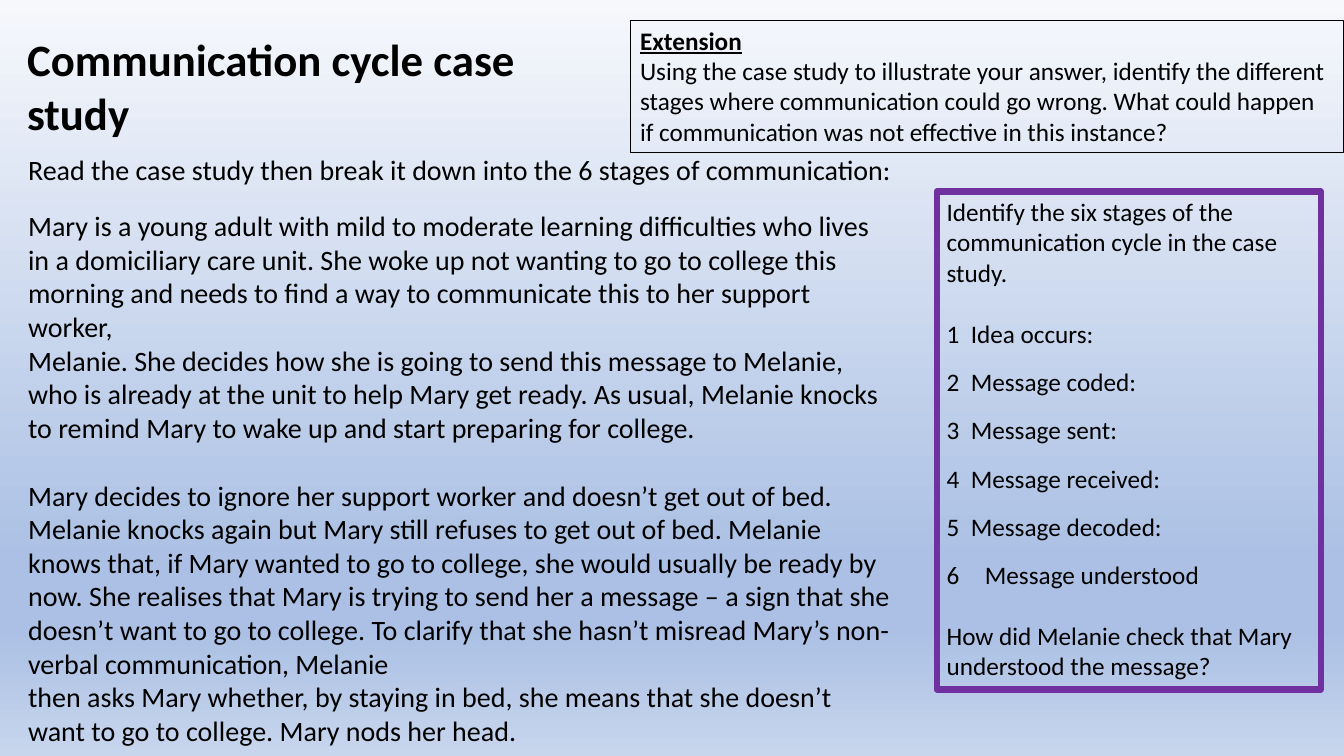
from copy import deepcopy

from lxml.etree import SubElement
from pptx import Presentation
from pptx.dml.color import RGBColor
from pptx.enum.shapes import MSO_SHAPE as Shape
from pptx.enum.text import MSO_ANCHOR as Anchor, PP_ALIGN as Align
from pptx.oxml.ns import qn
from pptx.util import Inches, Pt

WIDTH, HEIGHT = Inches(13.33), Inches(7.5)
BLACK = RGBColor(0x00, 0x00, 0x00)
PURPLE = RGBColor(0x70, 0x30, 0xA0)
PALE = RGBColor(0xF6, 0xF8, 0xFC)
BLUE = RGBColor(0xAB, 0xC0, 0xE4)
LIGHT_BLUE = RGBColor(0xC7, 0xD5, 0xED)
SKY = [(0, PALE), (0.74, BLUE), (0.83, BLUE), (1, LIGHT_BLUE)]

CASE_STUDY = [
    ("Mary is a young adult with mild to moderate learning difficulties who lives in a "
     "domiciliary care unit. She woke up not wanting to go to college this morning and "
     "needs to find a way to communicate this to her support worker,", 0),
    ("Melanie. She decides how she is going to send this message to Melanie, who is "
     "already at the unit to help Mary get ready. As usual, Melanie knocks to remind "
     "Mary to wake up and start preparing for college.", 0),
    ("Mary decides to ignore her support worker and doesn’t get out of bed. Melanie "
     "knocks again but Mary still refuses to get out of bed. Melanie knows that, if Mary "
     "wanted to go to college, she would usually be ready by now. She realises that Mary "
     "is trying to send her a message – a sign that she doesn’t want to go to college. "
     "To clarify that she hasn’t misread Mary’s non-verbal communication, Melanie", 24.4),
    ("then asks Mary whether, by staying in bed, she means that she doesn’t want to go "
     "to college. Mary nods her head.", 0),
]
STAGES = ["Idea occurs:", "Message coded:", "Message sent:", "Message received:",
          "Message decoded:", "Message understood"]


def paint_background(s, stops):
    """Fill the slide from top to bottom with the gradient stops."""
    fill = s.background.fill
    fill.gradient()
    fill.gradient_angle = 270
    gs_list = next(s.element.iter(qn("a:gsLst")))
    while len(gs_list) < len(stops):
        gs_list.append(deepcopy(gs_list[0]))
    for stop, (position, color) in zip(fill.gradient_stops, stops):
        stop.position = position
        stop.color.rgb = color


def add_box(s, x, y, w, h, line=None, weight=0):
    """Add a text area, outlined if a line colour is given, and return its frame."""
    area = Inches(x), Inches(y), Inches(w), Inches(h)
    if line is None:
        sp = s.shapes.add_textbox(*area)
    else:
        sp = s.shapes.add_shape(Shape.RECTANGLE, *area)
        sp.shadow.inherit = False
        sp.fill.background()
        sp.line.color.rgb = line
        sp.line.width = Pt(weight)
    tf = sp.text_frame
    tf.word_wrap = True
    tf.vertical_anchor = Anchor.TOP
    return tf


def add_text(tf, text, size, before=0, bold=False, underline=False):
    """Write a paragraph into the frame and return it."""
    p = tf.paragraphs[0]
    if p.runs:
        p = tf.add_paragraph()
    p.alignment = Align.LEFT
    if before:
        p.space_before = Pt(before)
    r = p.add_run()
    r.text = text
    font = r.font
    font.name, font.size, font.color.rgb = "Calibri", Pt(size), BLACK
    font.bold, font.underline = bold, underline
    return p


def number_paragraph(p, number, indent):
    """Give the paragraph an automatic number with a hanging indent."""
    pPr = p._p.get_or_add_pPr()
    pPr.set("marL", str(Inches(indent)))
    pPr.set("indent", str(-Inches(indent)))
    SubElement(pPr, qn("a:buFont"), typeface="+mj-lt")
    SubElement(pPr, qn("a:buAutoNum"), type="arabicPlain", startAt=str(number))


def add_stages(s):
    """Add the purple box with the six stages to identify."""
    tf = add_box(s, 9.29, 1.9, 3.81, 4.94, PURPLE, 4.5)
    add_text(tf, "Identify the six stages of the communication cycle in the case study.", 18)
    for number, stage in enumerate(STAGES, 1):
        p = add_text(tf, stage, 18, 22 if number == 1 else 12.9)
        number_paragraph(p, number, 0.38 if number == len(STAGES) else 0.24)
    add_text(tf, "How did Melanie check that Mary understood the message?", 18, 22)


def main():
    """Build the slide and save it."""
    prs = Presentation()
    prs.slide_width, prs.slide_height = WIDTH, HEIGHT
    s = prs.slides.add_slide(prs.slide_layouts[6])
    paint_background(s, SKY)
    add_text(add_box(s, 0.17, 0.27, 5.85, 1.18), "Communication cycle case study", 32, bold=True)
    add_text(add_box(s, 0.18, 1.46, 9.06, 0.44),
             "Read the case study then break it down into the 6 stages of communication:", 20)
    story = add_box(s, 0.18, 2.02, 8.79, 5.49)
    for text, before in CASE_STUDY:
        add_text(story, text, 20, before)
    add_stages(s)
    extension = add_box(s, 6.25, 0.2, 7.08, 1.31, BLACK, 0.75)
    add_text(extension, "Extension", 18, bold=True, underline=True)
    add_text(extension, "Using the case study to illustrate your answer, identify the "
             "different stages where communication could go wrong. What could happen if "
             "communication was not effective in this instance?", 18)
    prs.save("out.pptx")


if __name__ == "__main__":
    main()
